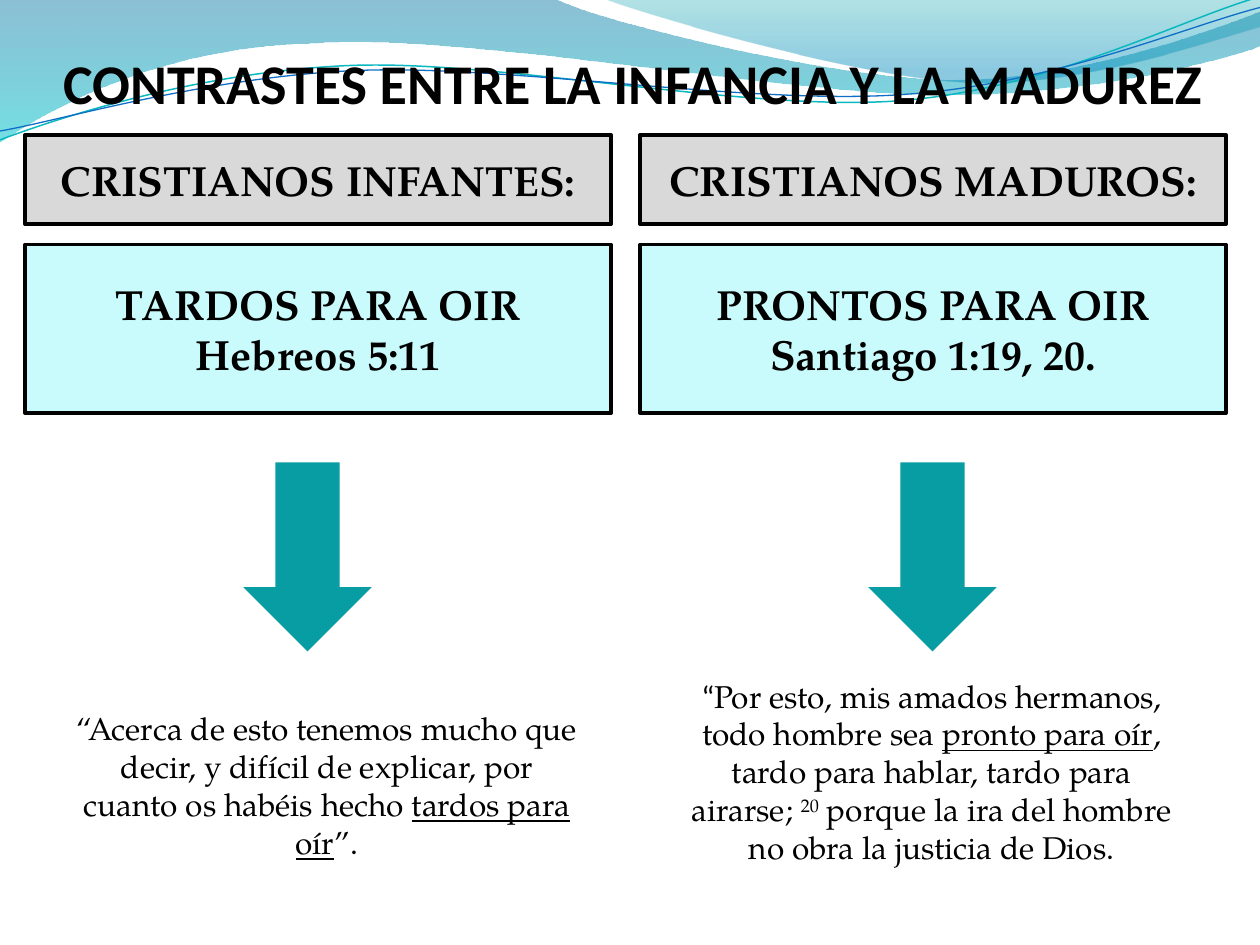
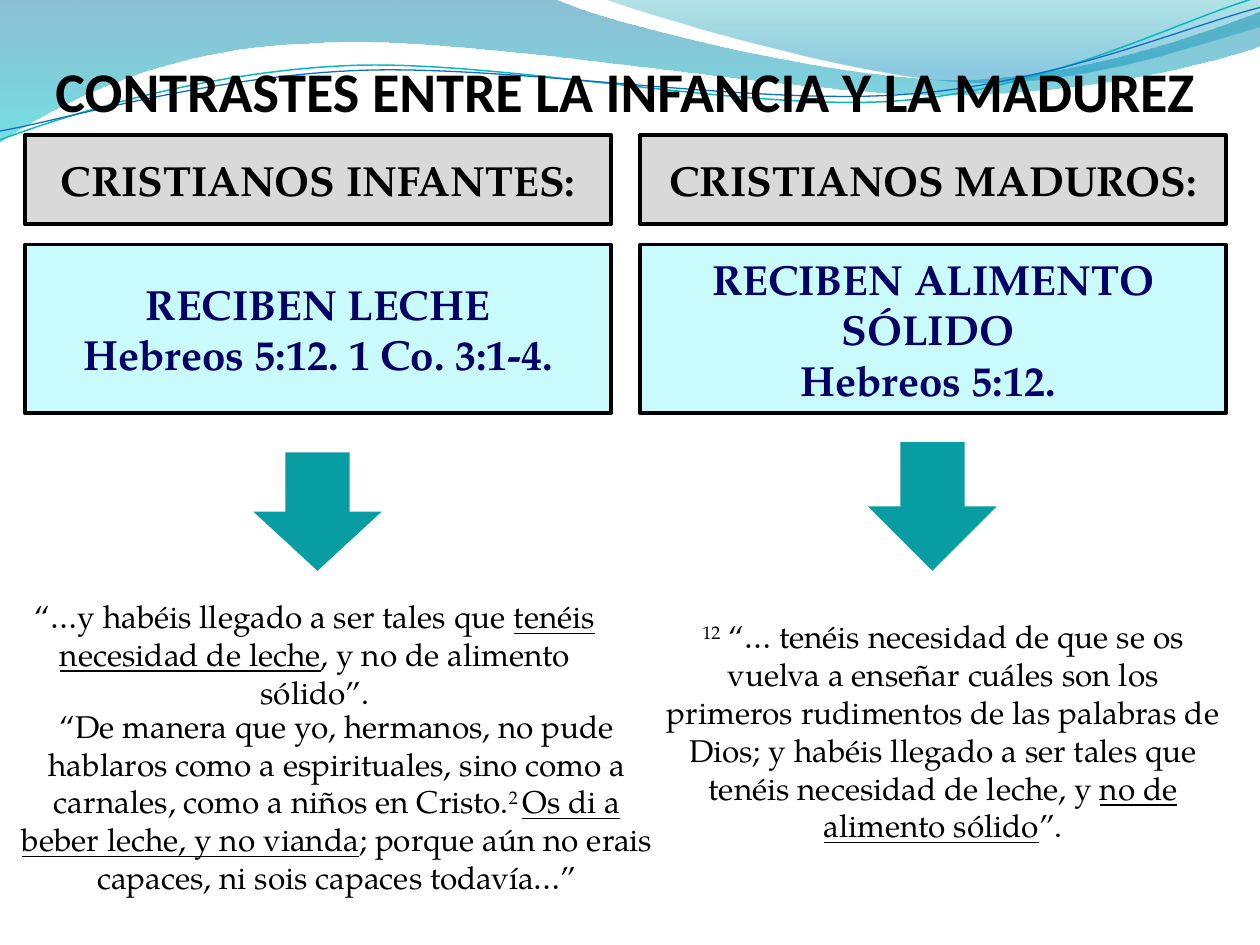
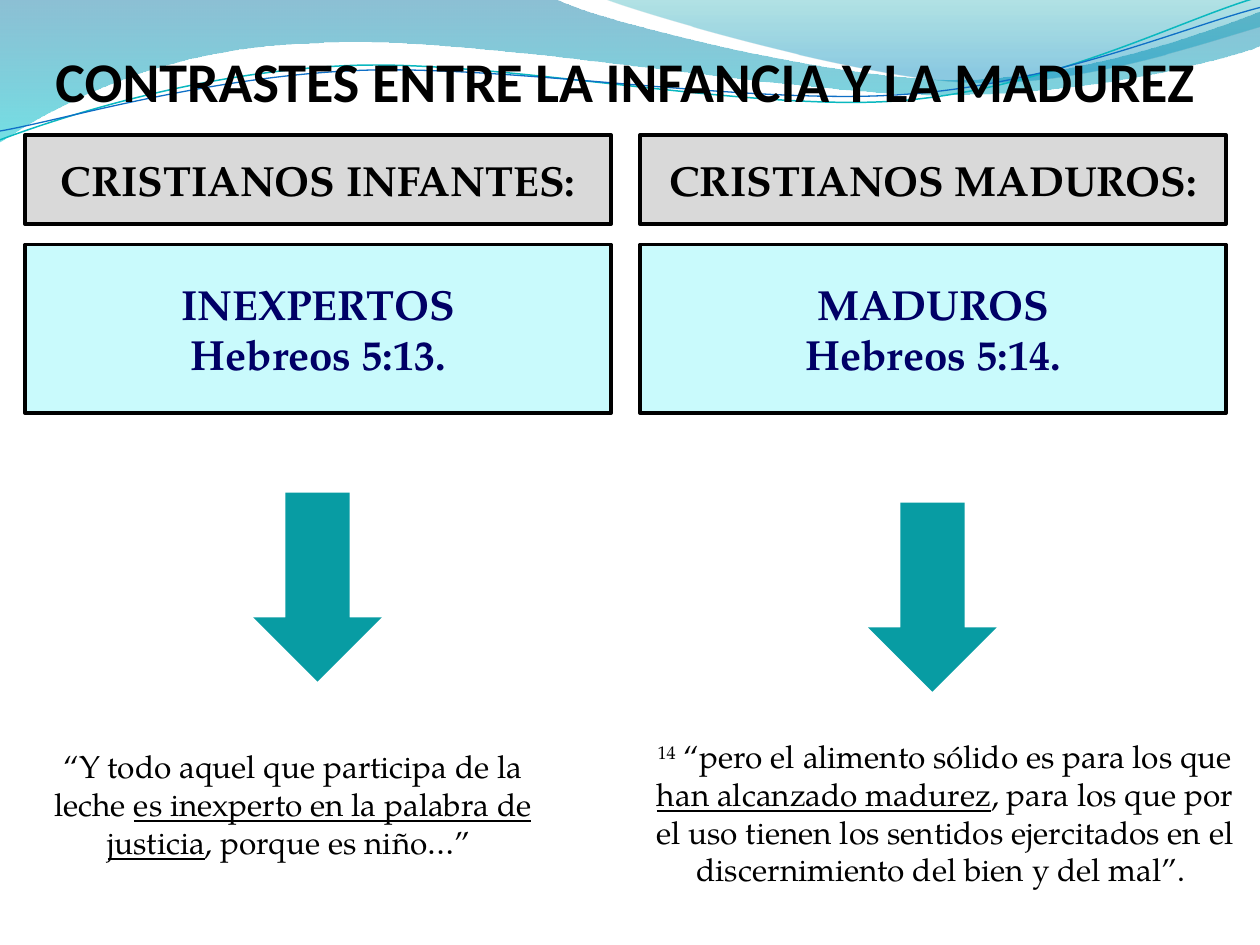
from math import cos, radians, sin

from lxml import etree
from pptx import Presentation
from pptx.dml.color import RGBColor
from pptx.enum.shapes import MSO_SHAPE
from pptx.enum.text import MSO_ANCHOR, MSO_AUTO_SIZE, PP_ALIGN
from pptx.oxml.ns import qn
from pptx.util import Inches, Pt

RECTANGLE, DOWN_ARROW = MSO_SHAPE.RECTANGLE, MSO_SHAPE.DOWN_ARROW
LEFT, CENTER = PP_ALIGN.LEFT, PP_ALIGN.CENTER
TOP, MIDDLE, BOTTOM = MSO_ANCHOR.TOP, MSO_ANCHOR.MIDDLE, MSO_ANCHOR.BOTTOM
GROW = MSO_AUTO_SIZE.SHAPE_TO_FIT_TEXT

TITLE_FONT, BODY_FONT = "Calibri", "TeX Gyre Pagella"
BLACK, NAVY, GRAY, PALE_CYAN, TEAL = "000000", "000066", "D9D9D9", "C9FAFC", "089CA3"

TITLE = "CONTRASTES ENTRE LA INFANCIA Y LA MADUREZ"
HEADINGS = ["CRISTIANOS INFANTES:", "CRISTIANOS MADUROS:"]
COLUMN_LEFTS = [0.2, 5.08]
COLUMN_WIDTH = 4.65
HEADING_TOP, HEADING_HEIGHT = 1.07, 0.71
TRAIT_TOP, TRAIT_HEIGHT = 1.94, 1.34
ARROW_WIDTH = 1.02

# Each quote is a box (left, top, width, height) and its spans (text, style).
SLIDES = [
    {
        "title": (0.5, 0.31, 9.22, 0.61), "title_align": LEFT, "trait_color": BLACK,
        "traits": [["TARDOS PARA OIR", "Hebreos 5:11"],
                   ["PRONTOS PARA OIR", "Santiago 1:19, 20."]],
        "arrows": [(1.93, 3.67, 1.5), (6.89, 3.67, 1.5)],
        "quotes": [
            ((0.51, 5.58, 4.17, 1.01), [
                ("“Acerca de esto tenemos mucho que decir, y difícil de explicar, "
                 "por cuanto os habéis hecho ", ""),
                ("tardos para oír", "underline"), ("”.", "")]),
            ((5.31, 5.32, 4.17, 1.62), [
                ("“", "title font"), ("Por esto, mis amados hermanos, todo hombre sea ", ""),
                ("pronto para oír", "underline"),
                (", tardo para hablar, tardo para airarse; ", ""), ("20", "superscript"),
                (" porque la ira del hombre no obra la justicia de Dios.", "")]),
        ],
    },
    {
        "title": (0.2, 0.37, 9.53, 0.61), "title_align": CENTER, "trait_color": NAVY,
        "traits": [["RECIBEN LECHE", "Hebreos 5:12. 1 Co. 3:1-4."],
                   ["RECIBEN ALIMENTO SÓLIDO ", "Hebreos 5:12. "]],
        "arrows": [(2.01, 3.59, 0.94), (6.89, 3.51, 1.02)],
        "quotes": [
            ((0, 4.69, 5, 0.71), [
                ("“…y habéis llegado a ser tales que ", ""),
                ("tenéis necesidad de leche", "underline"),
                (", y no de alimento sólido”.", "")]),
            ((0, 5.56, 5.35, 1.62), [
                ("“De manera que yo, hermanos, no pude hablaros como a espirituales, "
                 "sino como a carnales, como a niños en Cristo.", ""),
                ("2 ", "superscript"), ("Os di a beber leche, y no vianda", "underline"),
                ("; porque aún no erais capaces, ni sois capaces todavía…”", "")]),
            ((5.16, 4.85, 4.65, 1.92), [
                ("12", "superscript"),
                (" “… tenéis necesidad de que se os vuelva a enseñar cuáles son los primeros "
                 "rudimentos de las palabras de Dios; y habéis llegado a ser tales que "
                 "tenéis necesidad de leche, y ", ""),
                ("no de alimento sólido", "underline"), ("”.", "")]),
        ],
    },
    {
        "title": (0.2, 0.29, 9.53, 0.61), "title_align": CENTER, "trait_color": NAVY,
        "traits": [["INEXPERTOS", "Hebreos 5:13."], ["MADUROS", "Hebreos 5:14."]],
        "arrows": [(2.01, 3.91, 1.5), (6.89, 3.99, 1.5)],
        "quotes": [
            ((0.2, 5.88, 4.25, 1.01), [
                ("“Y todo aquel que participa de la leche ", ""),
                ("es inexperto en la palabra de justicia", "underline"),
                (", porque es niño…” ", "")]),
            ((5, 5.8, 5, 1.31), [
                ("14", "superscript"), (" “pero el alimento sólido es para los que ", ""),
                ("han alcanzado madurez", "underline"),
                (", para los que por el uso tienen los sentidos ejercitados en el "
                 "discernimiento del bien y del mal”. ", "")]),
        ],
    },
]

# Outlines start at one point; 2 numbers add a straight line, 6 a Bézier curve.
# Gradient stops are (position, colour, opacity in percent), from top to bottom.
WAVE_BANDS = [
    ([(0, 0), (4.4, -0.01), (4.76, 0.17, 6.64, 0.63, 7.58, 0.63),
      (8.53, 0.63, 9.58, 0.26, 10, 0.09), (10.01, 0.36),
      (9.83, 0.44, 8.7, 0.76, 7.46, 0.75), (6.22, 0.75, 3.82, 0.28, 2.57, 0.34),
      (1.29, 0.36, 0.46, 0.83, -0.01, 1.13), (0, 0)],
     [(0, "0074A1", 45), (1, "00C6CF", 55)]),
    ([(4.79, -0.01), (5.09, 0.11, 6.82, 0.62, 7.69, 0.65),
      (8.56, 0.69, 9.61, 0.32, 10, 0.21), (10, 0), (4.79, -0.01)],
     [(0, "00A1A9", 30), (0.8, "008BBF", 45)]),
]
# Each line: outline, centre it is turned about, colour, width in points.
WAVE_LINES = [
    ([(0, 1.11), (0.48, 0.93, 1.58, 0.57, 2.77, 0.52),
      (3.95, 0.47, 5.93, 0.89, 7.13, 0.8), (8.33, 0.71, 9.38, 0.15, 9.98, -0.02)],
     (4.99, 0.58), "0AB8BF", 0.85),
    ([(0, 1.04), (0.47, 0.96, 1.64, 0.61, 2.83, 0.56),
      (4.03, 0.51, 5.97, 0.84, 7.17, 0.75), (8.36, 0.67, 9.41, 0.21, 10, 0.06)],
     (5, 0.59), "0F6FC6", 0.75),
]
WAVE_TILT = 2.7


def color(hex_string):
    return RGBColor.from_string(hex_string)


def level(outline, center):
    """Turn an outline clockwise by the tilt, which the shape's rotation undoes."""
    angle = radians(WAVE_TILT)
    turned = []
    for segment in outline:
        numbers = []
        for x, y in zip(segment[::2], segment[1::2]):
            across, down = x - center[0], y - center[1]
            numbers += [center[0] + across * cos(angle) - down * sin(angle),
                        center[1] + across * sin(angle) + down * cos(angle)]
        turned.append(numbers)
    return turned


def add_outline(page, outline, closed):
    points = [(Inches(x), Inches(y)) for segment in outline
              for x, y in zip(segment[::2], segment[1::2])]
    builder = page.shapes.build_freeform(*points[0])
    builder.add_line_segments(points[1:], close=closed)
    shape = builder.convert_to_shape()
    shape.shadow.inherit = False
    lines = iter(list(shape.element.iter(qn("a:lnTo"))))
    for segment in outline[1:]:
        line = next(lines)
        if len(segment) == 6:
            line.tag = qn("a:cubicBezTo")
            for extra in (next(lines), next(lines)):
                line.append(extra[0])
                extra.getparent().remove(extra)
    return shape


def add_waves(page, layout):
    """Draw the waves and move them to the layout that all slides share."""
    waves = []
    for outline, stops in WAVE_BANDS:
        band = add_outline(page, outline, True)
        band.line.fill.background()
        band.fill.gradient()
        band.fill.gradient_angle = 270
        for stop, (position, shade, _) in zip(band.fill.gradient_stops, stops):
            stop.position = position
            stop.color.rgb = color(shade)
        for element, (_, _, opacity) in zip(band.element.iter(qn("a:srgbClr")), stops):
            etree.SubElement(element, qn("a:alpha"), val=str(opacity * 1000))
        waves.append(band)
    for outline, center, shade, width in WAVE_LINES:
        wave = add_outline(page, level(outline, center), False)
        wave.rotation = 360 - WAVE_TILT
        wave.fill.background()
        wave.line.color.rgb = color(shade)
        wave.line.width = Pt(width)
        waves.append(wave)
    for wave in waves:
        layout.shapes.element.append(wave.element)


def add_shape(page, kind, place, fill, outlined=False):
    shape = page.shapes.add_shape(kind, *map(Inches, place))
    shape.shadow.inherit = False
    shape.fill.solid()
    shape.fill.fore_color.rgb = color(fill)
    if outlined:
        shape.line.color.rgb = color(BLACK)
        shape.line.width = Pt(2)
    else:
        shape.line.fill.background()
    return shape


def write(box, paragraphs, size, shade=BLACK, font=BODY_FONT, bold=False,
          align=CENTER, anchor=TOP):
    """Fill a box with paragraphs, each a list of (text, style) spans."""
    frame = box.text_frame
    frame.word_wrap = True
    frame.vertical_anchor = anchor
    for index, spans in enumerate(paragraphs):
        para = frame.add_paragraph() if index else frame.paragraphs[0]
        para.alignment = align
        para.font.name = font
        para.font.size = Pt(size)
        para.font.bold = bold
        para.font.color.rgb = color(shade)
        for text, style in spans:
            span = para.add_run()
            span.text = text
            if style == "underline":
                span.font.underline = True
            elif style == "superscript":
                span._r.get_or_add_rPr().set("baseline", "30000")
            elif style == "title font":
                span.font.name = TITLE_FONT


def add_title(page, place, align):
    box = page.shapes.add_textbox(*map(Inches, place))
    write(box, [[(TITLE, "")]], 32, font=TITLE_FONT, bold=True, align=align, anchor=BOTTOM)
    frame = box.text_frame
    frame.margin_left = frame.margin_right = frame.margin_bottom = 0


def add_panel(page, place, fill, lines, shade):
    panel = add_shape(page, RECTANGLE, place, fill, outlined=True)
    write(panel, [[(line, "")] for line in lines], 24, shade, bold=True, anchor=MIDDLE)


def add_quote(page, place, spans):
    box = page.shapes.add_textbox(*map(Inches, place))
    write(box, [spans], 18)
    box.text_frame.auto_size = GROW


def fill_slide(page, content):
    add_title(page, content["title"], content["title_align"])
    for left, heading, trait in zip(COLUMN_LEFTS, HEADINGS, content["traits"]):
        add_panel(page, (left, HEADING_TOP, COLUMN_WIDTH, HEADING_HEIGHT),
                  GRAY, [heading], BLACK)
        add_panel(page, (left, TRAIT_TOP, COLUMN_WIDTH, TRAIT_HEIGHT),
                  PALE_CYAN, trait, content["trait_color"])
    for left, top, height in content["arrows"]:
        add_shape(page, DOWN_ARROW, (left, top, ARROW_WIDTH, height), TEAL)
    for place, spans in content["quotes"]:
        add_quote(page, place, spans)


def main():
    deck = Presentation()
    deck.slide_width, deck.slide_height = Inches(10), Inches(7.5)
    layout = deck.slide_layouts[6]
    pages = [deck.slides.add_slide(layout) for _ in SLIDES]
    add_waves(pages[0], layout)
    for page, content in zip(pages, SLIDES):
        fill_slide(page, content)
    deck.save("out.pptx")


if __name__ == "__main__":
    main()
